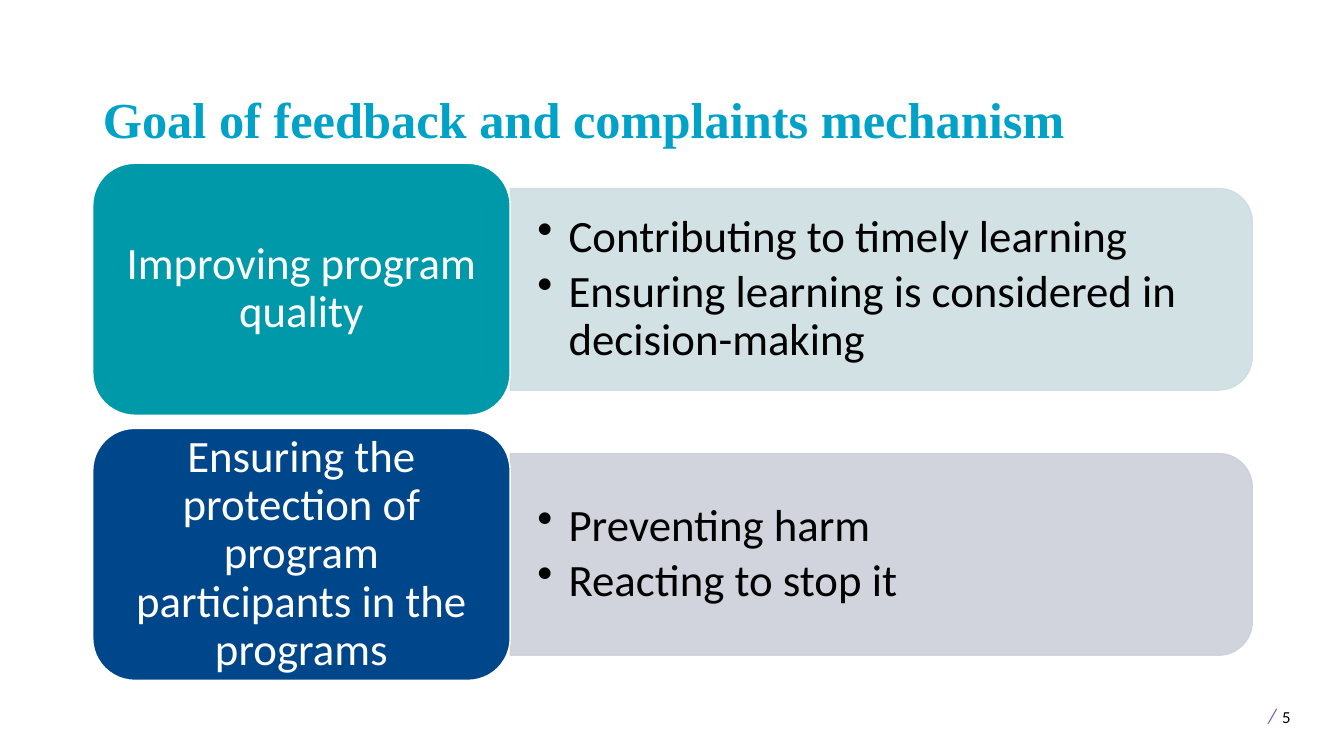
from dataclasses import dataclass

from lxml.etree import SubElement
from pptx import Presentation
from pptx.dml.color import RGBColor
from pptx.enum.shapes import MSO_SHAPE
from pptx.enum.text import MSO_ANCHOR, MSO_AUTO_SIZE, PP_ALIGN
from pptx.oxml import parse_xml
from pptx.oxml.ns import nsdecls, qn
from pptx.util import Pt

PX = 9144  # 100 px to the inch


@dataclass(frozen=True)
class Theme:
    title_font: str = "Times New Roman"
    body_font: str = "Calibri"
    title_size: int = 36
    body_size: int = 32
    slash_size: int = 15
    number_size: int = 12
    title: str = "00A2C7"
    slash: str = "9053A1"
    dark: str = "000000"
    light: str = "FFFFFF"


THEME = Theme()

# Label, label colour, panel colour, bullets
GOALS = [
    ("Improving program quality", "0099A9", "CCDEE2",
     ["Contributing to timely learning",
      "Ensuring learning is considered in decision-making"]),
    ("Ensuring the protection of program participants in the programs",
     "00468B", "CCD0DA",
     ["Preventing harm", "Reacting to stop it"]),
]


def px(*lengths):
    return [length * PX for length in lengths]


def set_font(font, name, size, color, bold=False, italic=False):
    font.name, font.size = name, Pt(size)
    font.bold, font.italic = bold, italic
    font.color.rgb = RGBColor.from_string(color)


def set_frame(frame, anchor, horizontal, vertical):
    frame.word_wrap = True
    frame.auto_size = MSO_AUTO_SIZE.NONE
    frame.vertical_anchor = anchor
    frame.margin_left = frame.margin_right = horizontal * PX
    frame.margin_top = frame.margin_bottom = vertical * PX


def add_filled(slide, preset, box, fill, line):
    shape = slide.shapes.add_shape(preset, *px(*box))
    shape.shadow.inherit = False
    shape.fill.solid()
    shape.fill.fore_color.rgb = RGBColor.from_string(fill)
    shape.line.color.rgb = RGBColor.from_string(line)
    shape.line.width = Pt(1)
    return shape


def add_title(slide, box, text):
    title = slide.shapes.title
    title.left, title.top, title.width, title.height = px(*box)
    set_frame(title.text_frame, MSO_ANCHOR.BOTTOM, 10, 5)
    title.text_frame.text = text
    paragraph = title.text_frame.paragraphs[0]
    paragraph.alignment = PP_ALIGN.LEFT
    paragraph.line_spacing = 0.9
    set_font(paragraph.font, THEME.title_font, THEME.title_size, THEME.title, bold=True)


def add_label(slide, box, text, color):
    label = add_filled(slide, MSO_SHAPE.ROUNDED_RECTANGLE, box, color, THEME.light)
    set_frame(label.text_frame, MSO_ANCHOR.MIDDLE, 13, 7)
    label.text_frame.text = text
    paragraph = label.text_frame.paragraphs[0]
    paragraph.alignment = PP_ALIGN.CENTER
    paragraph.line_spacing = 0.9
    set_font(paragraph.font, THEME.body_font, THEME.body_size, THEME.light)


def add_panel(slide, box, bullets, color):
    left, top, width, height = box
    # Turned a quarter so that the rounded corners face right
    turned = (left + (width - height) / 2, top + (height - width) / 2, height, width)
    turned = [round(length) for length in turned]
    panel = add_filled(slide, MSO_SHAPE.ROUND_2_SAME_RECTANGLE, turned, color, color)
    panel.rotation = 90
    for rgb in panel.element.spPr.iter(qn("a:srgbClr")):
        SubElement(rgb, qn("a:alpha"), val="90000")

    # Bullets
    text_box = slide.shapes.add_textbox(*px(left, top + 10, width - 10, height - 20))
    frame = text_box.text_frame
    set_frame(frame, MSO_ANCHOR.MIDDLE, 27, 14)
    frame.text = "\n".join(bullets)
    for paragraph in frame.paragraphs:
        paragraph.line_spacing = 0.9
        paragraph.space_after = Pt(4.8)
        properties = paragraph._p.get_or_add_pPr()
        properties.set("marL", str(31 * PX))
        properties.set("indent", str(-31 * PX))
        SubElement(properties, qn("a:buChar"), char="•")
        set_font(paragraph.font, THEME.body_font, THEME.body_size, THEME.dark)


def add_goal(slide, box, goal):
    left, top, width, height = box
    label, label_color, panel_color, bullets = goal
    label_width, inset = 414, 25
    add_panel(slide, (left + label_width, top + inset, width - label_width,
                      height - 2 * inset), bullets, panel_color)
    add_label(slide, (left, top, label_width, height), label, label_color)


def add_page_number(slide, box, number):
    text_box = slide.shapes.add_textbox(*px(*box))
    set_frame(text_box.text_frame, MSO_ANCHOR.MIDDLE, 15, 5)
    paragraph = text_box.text_frame.paragraphs[0]
    slash = paragraph.add_run()
    slash.text = "/"
    set_font(slash.font, THEME.body_font, THEME.slash_size, THEME.slash, italic=True)
    space = paragraph.add_run()
    space.text = " "
    set_font(space.font, THEME.body_font, 18, THEME.dark)
    paragraph._p.append(parse_xml(
        f'<a:fld {nsdecls("a")} id="{{B6F15528-21DE-4FAA-801E-634DDDAF4B2B}}" '
        f'type="slidenum"><a:rPr lang="en-US" sz="{THEME.number_size * 100}">'
        f'<a:solidFill><a:srgbClr val="{THEME.dark}"/></a:solidFill>'
        f'<a:latin typeface="{THEME.body_font}"/></a:rPr><a:t>{number}</a:t></a:fld>'))


def main():
    presentation = Presentation()
    presentation.slide_width, presentation.slide_height = px(1333, 750)
    # The slide number field shows 5
    presentation.element.set("firstSlideNum", "5")
    slide = presentation.slides.add_slide(presentation.slide_layouts[5])
    add_title(slide, (92, 40, 1150, 113), "Goal of feedback and complaints mechanism")
    height, gap = 250, 13
    for row, goal in enumerate(GOALS):
        add_goal(slide, (92, 162 + row * (height + gap), 1150, height), goal)
    add_page_number(slide, (1243, 688, 87, 40), 5)
    presentation.save("out.pptx")


if __name__ == "__main__":
    main()
